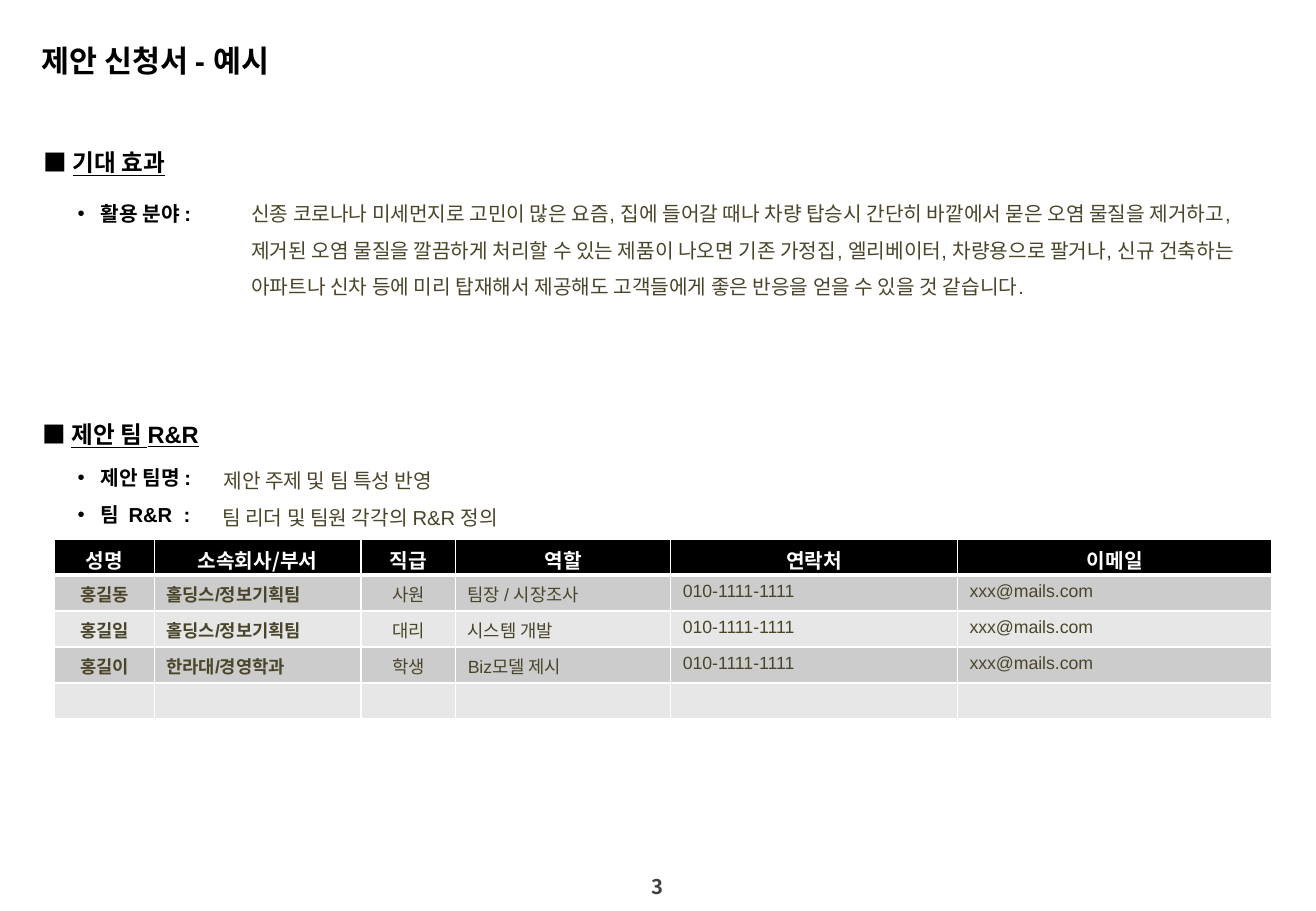
from lxml.etree import SubElement
from pptx import Presentation
from pptx.dml.color import RGBColor
from pptx.enum.text import MSO_ANCHOR, MSO_AUTO_SIZE, PP_ALIGN
from pptx.oxml.ns import qn
from pptx.util import Emu, Pt

PX = 9144  # 100 px to the inch
ARIAL, NOTO = "Arial", "Noto Sans CJK KR"
BLACK, WHITE, OLIVE, GREY = "000000", "FFFFFF", "4A452A", "404040"
BANDS = ("CCCCCC", "E7E7E7")
LEFT, CENTER = PP_ALIGN.LEFT, PP_ALIGN.CENTER

COLUMN_WIDTHS = (82, 170, 78, 177, 236, 259)
COLUMN_ALIGNS = (CENTER, LEFT, CENTER, LEFT, LEFT, LEFT)
HEADERS = ("성명", "소속회사/부서", "직급", "역할", "연락처", "이메일")
PHONE, EMAIL = "010-1111-1111", "xxx@mails.com"
MEMBERS = (
    ("홍길동", "홀딩스/정보기획팀", "사원", "팀장 / 시장조사", PHONE, EMAIL),
    ("홍길일", "홀딩스/정보기획팀", "대리", "시스템 개발", PHONE, EMAIL),
    ("홍길이", "한라대/경영학과", "학생", "Biz모델 제시", PHONE, EMAIL),
    ("",) * 6,
)
USAGE = (
    "신종 코로나나 미세먼지로 고민이 많은 요즘, 집에 들어갈 때나 차량 탑승시 간단히 바깥에서 묻은 "
    "오염 물질을 제거하고, 제거된 오염 물질을 깔끔하게 처리할 수 있는 제품이 나오면 기존 가정집, "
    "엘리베이터, 차량용으로 팔거나, 신규 건축하는 아파트나 신차 등에 미리 탑재해서 제공해도 "
    "고객들에게 좋은 반응을 얻을 수 있을 것 같습니다."
)


def px(n):
    return Emu(n * PX)


def rgb(value):
    return RGBColor.from_string(value)


def add_text(p, text, size=12, color=BLACK, bold=False, underline=False,
             font=ARIAL, align=LEFT, spacing=None):
    p.alignment = align
    if spacing:
        p.line_spacing = spacing
    if not text:
        p._p.get_or_add_endParaRPr().set("sz", str(int(size * 100)))
        return
    r = p.add_run()
    r.text = text
    r.font.name = font
    r.font.size = Pt(size)
    r.font.bold = bold
    if underline:
        r.font.underline = True
    r.font.color.rgb = rgb(color)
    SubElement(r._r.get_or_add_rPr(), qn("a:ea")).set("typeface", NOTO)


def add_box(s, x, y, w, h, wrap=True):
    """Add a text box and return its first paragraph."""
    tf = s.shapes.add_textbox(px(x), px(y), px(w), px(h)).text_frame
    tf.word_wrap = wrap
    return tf.paragraphs[0]


def set_title(s, text):
    title = s.shapes.title
    title.left, title.top, title.width, title.height = px(24), px(30), px(394), px(40)
    tf = title.text_frame
    tf.auto_size = MSO_AUTO_SIZE.NONE
    tf.vertical_anchor = MSO_ANCHOR.MIDDLE
    add_text(tf.paragraphs[0], text, size=18, bold=True)


def add_heading(s, text, x, y, w):
    p = add_box(s, x, y, w, 34)
    add_text(p, "■ ", size=14, bold=True)
    add_text(p, text, size=14, bold=True, underline=True)


def add_bullet_label(s, text, y, w):
    p = add_box(s, 54, y, w, 40)
    pPr = p._p.get_or_add_pPr()
    pPr.set("marL", str(px(19)))
    pPr.set("indent", str(px(-19)))
    SubElement(pPr, qn("a:buFont")).set("typeface", ARIAL)
    SubElement(pPr, qn("a:buChar")).set("char", "•")
    add_text(p, text, bold=True, spacing=1.5)


def add_detail(s, text, x, y, w, h):
    add_text(add_box(s, x, y, w, h), text, color=OLIVE, spacing=1.5)


def set_borders(cell, bottom):
    """Draw white 1 pt borders, with the bottom one of the given width."""
    tcPr = cell._tc.get_or_add_tcPr()
    for i, (side, width) in enumerate((("L", 1), ("R", 1), ("T", 1), ("B", bottom))):
        ln = SubElement(tcPr, qn(f"a:ln{side}"), w=str(Pt(width)))
        SubElement(SubElement(ln, qn("a:solidFill")), qn("a:srgbClr")).set("val", WHITE)
        tcPr.insert(i, ln)


def format_cell(cell, text, fill, bottom=1, **text_format):
    cell.margin_left = cell.margin_right = px(10)
    cell.margin_top, cell.margin_bottom = px(5), 0
    cell.vertical_anchor = MSO_ANCHOR.TOP
    cell.fill.solid()
    cell.fill.fore_color.rgb = rgb(fill)
    set_borders(cell, bottom)
    add_text(cell.text_frame.paragraphs[0], text, **text_format)


def add_team_table(s):
    rows = len(MEMBERS) + 1
    table = s.shapes.add_table(rows, len(HEADERS), px(45), px(444),
                               px(sum(COLUMN_WIDTHS)), px(148)).table
    for column, width in zip(table.columns, COLUMN_WIDTHS):
        column.width = px(width)
    for c, header in enumerate(HEADERS):
        format_cell(table.cell(0, c), header, BLACK, bottom=3, color=WHITE,
                    bold=True, align=CENTER, font=ARIAL if header == "연락처" else NOTO)
    for i, member in enumerate(MEMBERS):
        for c, value in enumerate(member):
            format_cell(table.cell(i + 1, c), value, BANDS[i % 2], size=10.5,
                        color=OLIVE, bold=c < 2, align=COLUMN_ALIGNS[c])


def main():
    prs = Presentation()
    prs.slide_width, prs.slide_height = px(1083), px(750)
    s = prs.slides.add_slide(prs.slide_layouts[5])

    set_title(s, "제안 신청서 - 예시")

    add_heading(s, "기대 효과", 26, 117, 596)
    add_bullet_label(s, "활용 분야 :", 151, 153)
    add_detail(s, USAGE, 197, 151, 849, 131)

    add_heading(s, "제안 팀 R&R", 25, 341, 230)
    add_bullet_label(s, "제안 팀명 :", 368, 124)
    add_detail(s, "제안 주제 및 팀 특성 반영", 174, 371, 861, 40)
    add_bullet_label(s, "팀  R&R  :", 399, 124)
    add_detail(s, "팀 리더 및 팀원 각각의 R&R 정의", 173, 401, 861, 40)
    add_team_table(s)

    add_text(add_box(s, 520, 715, 42, 30, wrap=False), "3", color=GREY,
             bold=True, font=NOTO, align=CENTER)
    prs.save("out.pptx")


if __name__ == "__main__":
    main()
